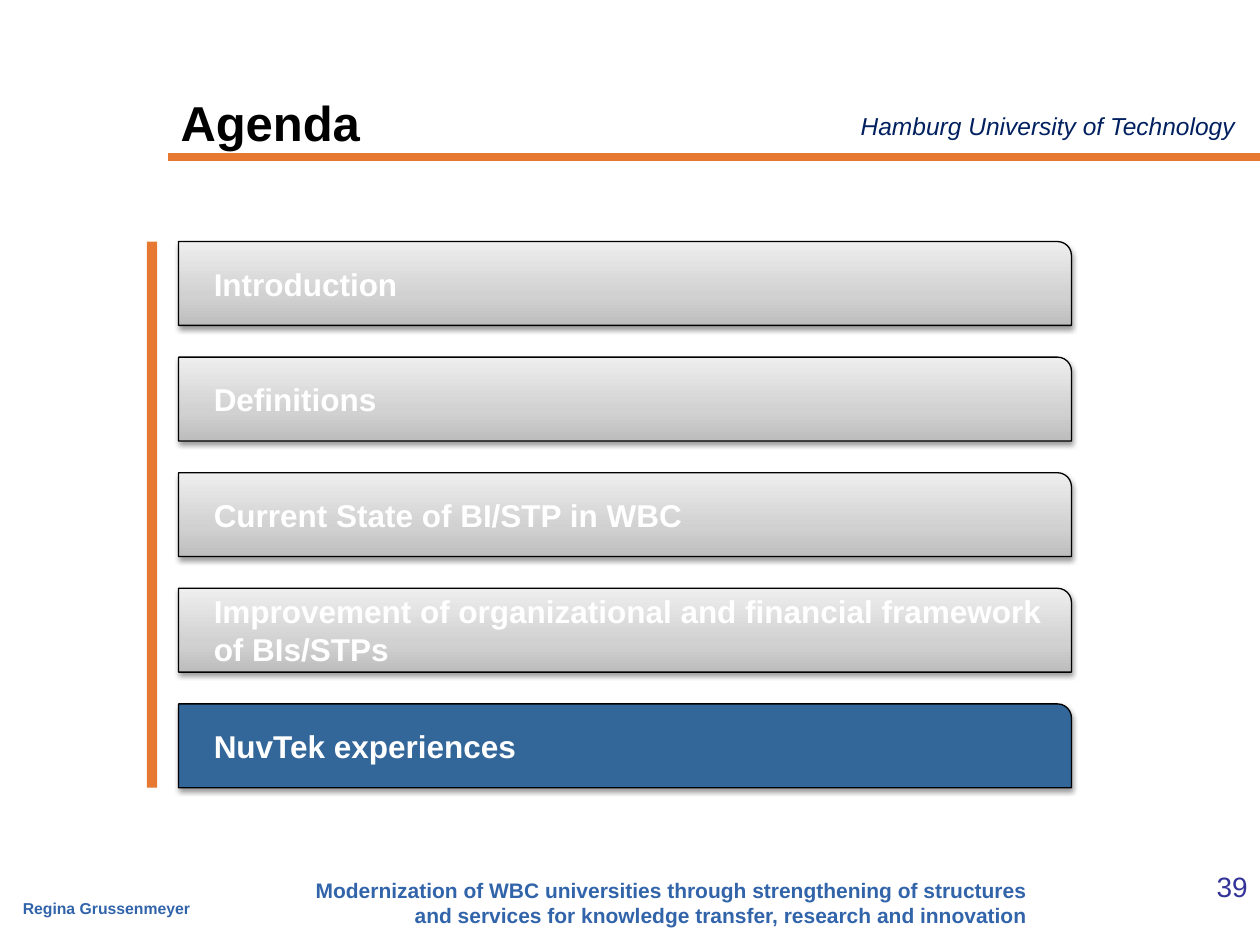
from lxml import etree
from pptx import Presentation
from pptx.dml.color import RGBColor
from pptx.enum.shapes import MSO_CONNECTOR, MSO_SHAPE
from pptx.enum.text import MSO_ANCHOR, PP_ALIGN
from pptx.oxml import parse_xml
from pptx.oxml.ns import nsdecls, qn
from pptx.util import Cm, Pt

LEFT, RIGHT = PP_ALIGN.LEFT, PP_ALIGN.RIGHT
TOP, MIDDLE, BOTTOM = MSO_ANCHOR.TOP, MSO_ANCHOR.MIDDLE, MSO_ANCHOR.BOTTOM

ORANGE = RGBColor(0xE6, 0x78, 0x32)
BLUE = RGBColor(0x33, 0x66, 0x99)
FOOTER_BLUE = RGBColor(0x32, 0x64, 0xAA)
NAVY = RGBColor(0x00, 0x20, 0x60)
INDIGO = RGBColor(0x33, 0x33, 0x99)
BLACK = RGBColor(0x00, 0x00, 0x00)
WHITE = RGBColor(0xFF, 0xFF, 0xFF)
# Gradient stops from the bottom edge upwards: position in percent, colour
GREY_STOPS = [
    (0, RGBColor(0xBD, 0xBD, 0xBD)),
    (35, RGBColor(0xD1, 0xD1, 0xD1)),
    (100, RGBColor(0xEE, 0xEE, 0xEE)),
]
FONT = "Arial"

# Content
AGENDA = [
    "Introduction",
    "Definitions",
    "Current State of BI/STP in WBC",
    "Improvement of organizational and financial framework of BIs/STPs",
    "NuvTek experiences",
]
CURRENT = 4

# Text, box (left, top, width, height in cm), alignment, anchor, wrap, font
LABELS = [
    ("Agenda", (3.39, 0, 13.55, 3.18), LEFT, BOTTOM, True,
     dict(size=28, color=BLACK, bold=True)),
    ("Hamburg University of Technology", (17.1, 2.12, 8.1, 0.85), LEFT, TOP, False,
     dict(size=14, color=NAVY, italic=True)),
    ("Regina Grussenmeyer", (0.21, 17.99, 5.72, 0.64), LEFT, TOP, True,
     dict(size=9, color=FOOTER_BLUE, bold=True)),
    ("Modernization of WBC universities through strengthening of structures "
     "and services for knowledge transfer, research and innovation",
     (5.93, 17.57, 15.03, 1.28), RIGHT, TOP, True,
     dict(size=12, color=FOOTER_BLUE, bold=True)),
    ("39", (23.5, 17.4, 1.9, 1.02), RIGHT, TOP, True,
     dict(size=16, color=INDIGO)),
]

# Layout in cm
SLIDE_WIDTH, SLIDE_HEIGHT = 25.4, 19.05
RULE_LEFT, RULE_TOP = 3.39, 3.17
BAR_LEFT, BAR_TOP, BAR_WIDTH, BAR_HEIGHT = 3.6, 4.87, 18, 1.69
BAR_PITCH = 2.33
STRIPE_LEFT, STRIPE_WIDTH = 2.96, 0.21


def write(frame, text, size, color, bold=False, italic=False, align=LEFT):
    paragraph = frame.paragraphs[0]
    paragraph.alignment = align
    run = paragraph.add_run()
    run.text = text
    font = run.font
    font.name, font.size, font.bold, font.italic = FONT, Pt(size), bold, italic
    font.color.rgb = color


def add_label(slide, text, box, align, anchor, wrap, style):
    frame = slide.shapes.add_textbox(*map(Cm, box)).text_frame
    frame.word_wrap = wrap
    frame.vertical_anchor = anchor
    write(frame, text, align=align, **style)


def add_block(slide, kind, left, top, width, height, color):
    shape = slide.shapes.add_shape(kind, Cm(left), Cm(top), Cm(width), Cm(height))
    shape.shadow.inherit = False
    shape.fill.solid()
    shape.fill.fore_color.rgb = color
    shape.line.fill.background()
    return shape


def set_grey_gradient(shape):
    """Swap the solid fill for the three-stop vertical gradient."""
    stops = "".join(
        f'<a:gs pos="{position * 1000}"><a:srgbClr val="{color}"/></a:gs>'
        for position, color in GREY_STOPS)
    gradient = parse_xml(
        f'<a:gradFill {nsdecls("a")} rotWithShape="1"><a:gsLst>{stops}</a:gsLst>'
        '<a:lin ang="16200000" scaled="0"/></a:gradFill>')
    properties = shape._element.spPr
    properties.replace(properties.find(qn("a:solidFill")), gradient)


def add_soft_shadow(shape):
    effects = shape._element.spPr.find(qn("a:effectLst"))
    effects.append(parse_xml(
        f'<a:outerShdw {nsdecls("a")} blurRad="40000" dist="20000" dir="5400000" '
        'rotWithShape="0"><a:srgbClr val="000000"><a:alpha val="38000"/>'
        '</a:srgbClr></a:outerShdw>'))


def add_agenda_bar(slide, index, text):
    bar = add_block(slide, MSO_SHAPE.ROUND_1_RECTANGLE, BAR_LEFT,
                    BAR_TOP + index * BAR_PITCH, BAR_WIDTH, BAR_HEIGHT, BLUE)
    if index != CURRENT:
        set_grey_gradient(bar)
    bar.line.color.rgb = BLACK
    bar.line.width = Pt(0.75)
    add_soft_shadow(bar)
    frame = bar.text_frame
    frame.word_wrap = True
    frame.vertical_anchor = MIDDLE
    frame.margin_left = Cm(0.71)
    write(frame, text, 18, WHITE, bold=True)


def main():
    presentation = Presentation()
    presentation.slide_width = Cm(SLIDE_WIDTH)
    presentation.slide_height = Cm(SLIDE_HEIGHT)
    slide = presentation.slides.add_slide(presentation.slide_layouts[6])

    # Rule under the title
    rule = slide.shapes.add_connector(
        MSO_CONNECTOR.STRAIGHT, Cm(RULE_LEFT), Cm(RULE_TOP), Cm(SLIDE_WIDTH), Cm(RULE_TOP))
    rule.line.color.rgb = ORANGE
    rule.line.width = Pt(4.5)
    etree.SubElement(rule._element.spPr, qn("a:effectLst"))

    # Title, header and footer
    for label in LABELS:
        add_label(slide, *label)

    # Agenda bars with the stripe beside them
    stack_height = (len(AGENDA) - 1) * BAR_PITCH + BAR_HEIGHT
    add_block(slide, MSO_SHAPE.RECTANGLE, STRIPE_LEFT, BAR_TOP,
              STRIPE_WIDTH, stack_height, ORANGE)
    for index, text in enumerate(AGENDA):
        add_agenda_bar(slide, index, text)

    presentation.save("out.pptx")


if __name__ == "__main__":
    main()
